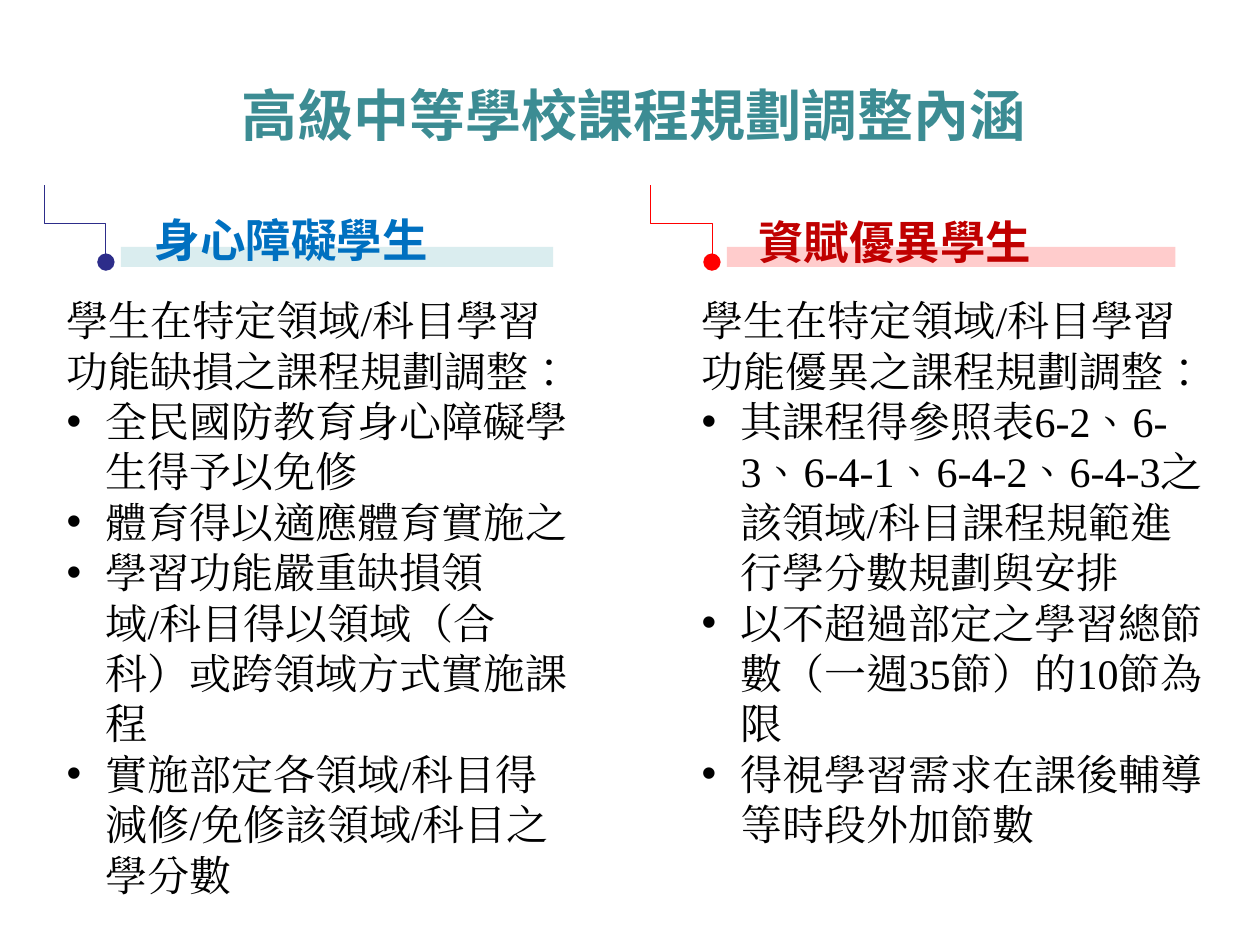
from dataclasses import dataclass

import pptx
import pptx.dml.color
import pptx.enum.lang
import pptx.enum.shapes
import pptx.enum.text
import pptx.oxml
import pptx.oxml.ns
import pptx.util


@dataclass(frozen=True)
class Theme:
    title_color: str = "3C8C93"
    body_color: str = "000000"
    title_size: int = 32
    heading_size: int = 26
    body_size: int = 24
    title_font: str = "Noto Sans CJK SC"
    heading_font: str = "Arial"
    body_font: str = "Times New Roman"
    leading: float = 1.2
    connector_width: float = 0.5
    bullet_indent: float = 0.31


class SlideBuilder:
    """Places elements on a grid of 100 columns by 75 rows."""
    COLUMNS, ROWS = 100, 75

    def __init__(self, deck, theme):
        self.theme = theme
        self.column = deck.slide_width / self.COLUMNS
        self.row = deck.slide_height / self.ROWS
        self.page = deck.slides.add_slide(deck.slide_layouts[5])

    def place(self, left, top, width, height):
        return (round(left * self.column), round(top * self.row),
                round(width * self.column), round(height * self.row))

    def style(self, para, font, size, color, bold=False, leading=None):
        if leading:
            para.line_spacing = pptx.util.Pt(round(size * leading, 1))
        for span in para.runs:
            span.font.name = font
            span.font.size = pptx.util.Pt(size)
            span.font.bold = bold
            span.font.color.rgb = pptx.dml.color.RGBColor.from_string(color)
            span.font.language_id = pptx.enum.lang.MSO_LANGUAGE_ID.TRADITIONAL_CHINESE
            latin = span.font._element.find(pptx.oxml.ns.qn("a:latin"))
            latin.addnext(self.element("ea", f'typeface="{font}"'))

    def element(self, tag, attributes=""):
        namespace = pptx.oxml.ns.nsdecls("a")
        return pptx.oxml.parse_xml(f"<a:{tag} {namespace} {attributes}/>")

    def title(self, text, *area):
        box = self.page.shapes.title
        box.left, box.top, box.width, box.height = self.place(*area)
        frame = box.text_frame
        frame.text = text
        frame.auto_size = pptx.enum.text.MSO_AUTO_SIZE.NONE
        frame.vertical_anchor = pptx.enum.text.MSO_ANCHOR.MIDDLE
        frame.margin_top = frame.margin_bottom = pptx.util.Inches(0.04)
        para = frame.paragraphs[0]
        para.alignment = pptx.enum.text.PP_ALIGN.CENTER
        self.style(para, self.theme.title_font, self.theme.title_size,
                   self.theme.title_color, bold=True)

    def text_box(self, text, *area):
        frame = self.page.shapes.add_textbox(*self.place(*area)).text_frame
        frame.word_wrap = True
        frame.text = text
        return frame

    def heading(self, text, color, leading, *area):
        frame = self.text_box(text, *area)
        self.style(frame.paragraphs[0], self.theme.heading_font,
                   self.theme.heading_size, color, True, leading)

    def body(self, lines, *area):
        frame = self.text_box("\n".join(lines), *area)
        for index, para in enumerate(frame.paragraphs):
            self.style(para, self.theme.body_font, self.theme.body_size,
                       self.theme.body_color, leading=self.theme.leading)
            if index:
                self.bullet(para)

    def bullet(self, para):
        indent = pptx.util.Inches(self.theme.bullet_indent)
        properties = para._p.get_or_add_pPr()
        properties.set("marL", str(indent))
        properties.set("indent", str(-indent))
        properties.append(self.element("buFont", 'typeface="Arial"'))
        properties.append(self.element("buChar", 'char="•"'))

    def bar(self, color, *area):
        kind = pptx.enum.shapes.MSO_SHAPE.RECTANGLE
        bar = self.page.shapes.add_shape(kind, *self.place(*area))
        bar.shadow.inherit = False
        bar.fill.solid()
        bar.fill.fore_color.rgb = pptx.dml.color.RGBColor.from_string(color)
        bar.line.fill.background()

    def step(self, color, *area):
        """An elbow that goes down, right and down again to a dot."""
        left, top, width, height = self.place(*area)
        # The elbow is laid out on its side, mirrored, then turned upright
        shift = (height - width) // 2
        left, top = left - shift, top + shift
        step = self.page.shapes.add_connector(
            pptx.enum.shapes.MSO_CONNECTOR.ELBOW,
            left + height, top, left, top + width)
        step._element.spPr.find(pptx.oxml.ns.qn("a:xfrm")).set("rot", "16200000")
        step.line.width = pptx.util.Pt(self.theme.connector_width)
        step.line.color.rgb = pptx.dml.color.RGBColor.from_string(color)
        step.line._get_or_add_ln().append(
            self.element("tailEnd", 'type="oval" w="lg" len="lg"'))
        step._element.spPr.append(self.element("effectLst"))


@dataclass(frozen=True)
class Group:
    heading: str
    heading_color: str
    heading_area: tuple
    heading_leading: float
    bar_color: str
    bar_area: tuple
    step_color: str
    step_left: float
    body_left: float
    lines: tuple


GROUPS = (
    Group("身心障礙學生", "0070C0", (11.3, 17.2, 37.2, 5.2), 0.96,
          "DAEDEF", (9.6, 19.6, 34.3, 1.6), "2D2D8A", 3.5, 4.3,
          ("學生在特定領域/科目學習功能缺損之課程規劃調整：",
           "全民國防教育身心障礙學生得予以免修",
           "體育得以適應體育實施之",
           "學習功能嚴重缺損領域/科目得以領域（合科）或跨領域方式實施課程",
           "實施部定各領域/科目得減修/免修該領域/科目之學分數")),
    Group("資賦優異學生", "C00000", (59.2, 16.5, 33.2, 6.1), 1.2,
          "FFCCCC", (57.7, 19.6, 35.6, 1.6), "FF0000", 51.6, 54.7,
          ("學生在特定領域/科目學習功能優異之課程規劃調整：",
           "其課程得參照表6-2、6-3、6-4-1、6-4-2、6-4-3之該領域/科目課程規範進行學分數規劃與安排",
           "以不超過部定之學習總節數（一週35節）的10節為限",
           "得視學習需求在課後輔導等時段外加節數")),
)


def main():
    deck = pptx.Presentation()
    deck.slide_width = pptx.util.Inches(10)
    deck.slide_height = pptx.util.Inches(7.5)
    builder = SlideBuilder(deck, Theme())

    # Title
    builder.title("高級中等學校課程規劃調整內涵", 4.8, 6, 91, 6.1)

    # One column per group of students
    for group in GROUPS:
        builder.body(group.lines, group.body_left, 22.9, 42.5, 45.4)
        builder.bar(group.bar_color, *group.bar_area)
        builder.heading(group.heading, group.heading_color,
                        group.heading_leading, *group.heading_area)
        builder.step(group.step_color, group.step_left, 14.7, 4.9, 6.1)

    deck.save("out.pptx")


if __name__ == "__main__":
    main()
